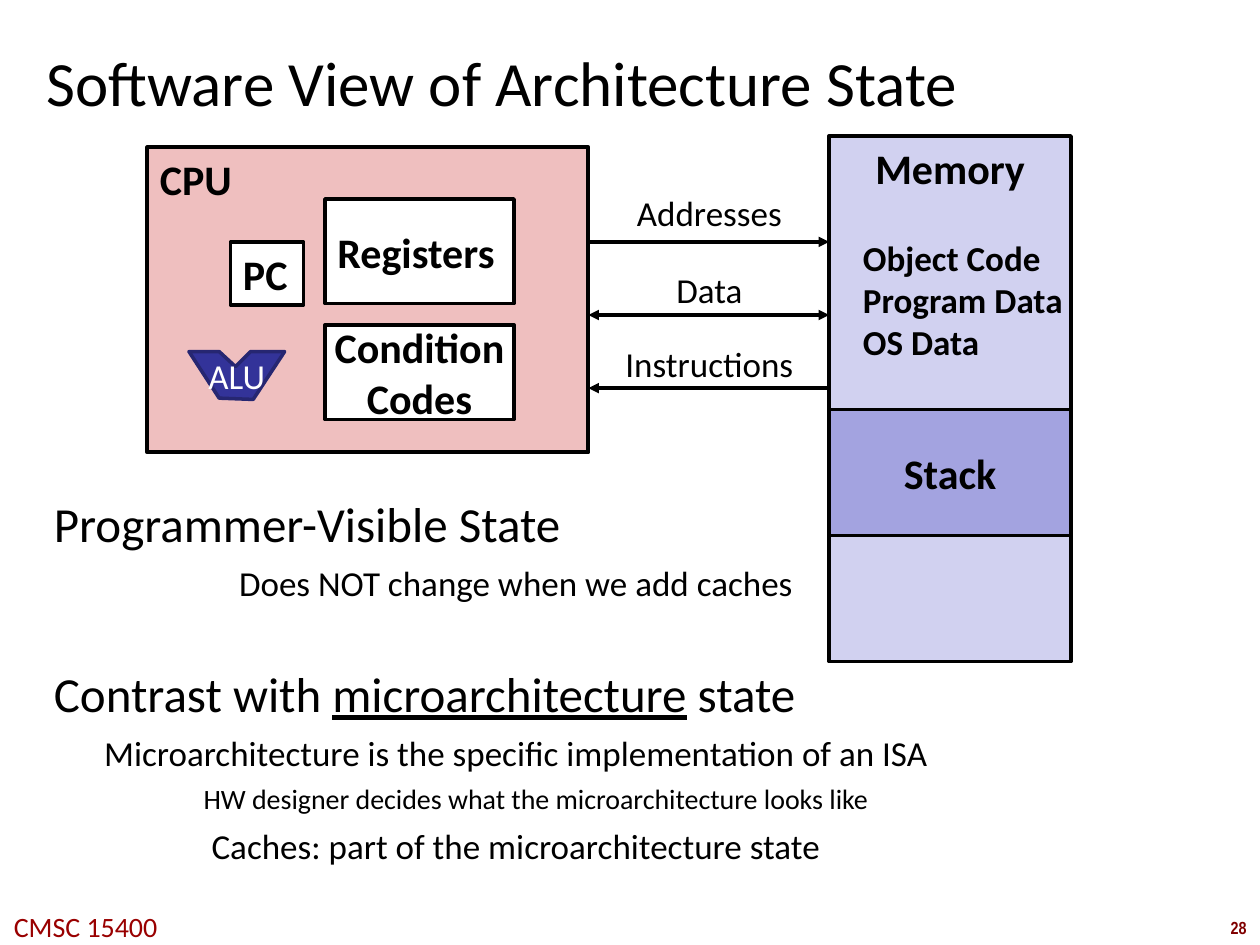
from dataclasses import dataclass
from typing import Optional

from lxml import etree
from pptx import Presentation
from pptx.dml.color import RGBColor
from pptx.enum import shapes, text
from pptx.oxml import ns
from pptx.util import Inches, Pt

BLACK = RGBColor(0x00, 0x00, 0x00)
WHITE = RGBColor(0xFF, 0xFF, 0xFF)
PINK = RGBColor(0xEF, 0xBF, 0xBF)
LAVENDER = RGBColor(0xD1, 0xD1, 0xF0)
VIOLET = RGBColor(0xA3, 0xA3, 0xE0)
INDIGO = RGBColor(0x33, 0x33, 0x99)
NAVY = RGBColor(0x26, 0x26, 0x71)
MAROON = RGBColor(0x80, 0x00, 0x00)
RED = RGBColor(0x99, 0x00, 0x00)

LEFT, CENTER = text.PP_ALIGN.LEFT, text.PP_ALIGN.CENTER
TOP, MIDDLE = text.MSO_ANCHOR.TOP, text.MSO_ANCHOR.MIDDLE

BUS_LEFT, BUS_RIGHT = 4.67, 6.58
BUS_TOP, BUS_STEP = 1.92, 0.58
MEMORY_WIDTH = 1.92


@dataclass(frozen=True)
class Block:
    label: str
    left: float
    top: float
    width: float
    height: float
    fill: RGBColor = WHITE
    align: text.PP_ALIGN = LEFT
    anchor: text.MSO_ANCHOR = MIDDLE
    line_width: float = 2
    wrap: bool = False


@dataclass(frozen=True)
class Bus:
    label: str
    label_top: float
    to_cpu: bool
    to_memory: bool


@dataclass(frozen=True)
class Point:
    content: str
    level: int = 1
    underlined: str = ""
    before: float = 5


BLOCKS = [
    Block("CPU", 1.17, 1.17, 3.5, 2.42, PINK, anchor=TOP, line_width=2.25, wrap=True),
    Block("PC", 1.83, 1.92, 0.58, 0.5),
    Block("Registers", 2.58, 1.58, 1.5, 0.83),
    Block("Condition\nCodes", 2.58, 2.58, 1.5, 0.75, align=CENTER),
    Block("Memory", BUS_RIGHT, 1.08, MEMORY_WIDTH, 4.17, LAVENDER, CENTER, TOP),
    Block("Stack", BUS_RIGHT, 3.25, MEMORY_WIDTH, 1, VIOLET, CENTER),
]
BUSES = [
    Bus("Addresses", 1.47, False, True),
    Bus("Data", 2.08, True, True),
    Bus("Instructions", 2.67, True, False),
]
POINTS = [
    Point("Programmer-Visible State", 0, before=0),
    Point("Does NOT change when we add caches"),
    Point("Contrast with microarchitecture state", 0, "microarchitecture", 34.4),
    Point("Microarchitecture is the specific implementation of an ISA"),
    Point("HW designer decides what the microarchitecture looks like", 2),
    Point("Caches: part of the microarchitecture state"),
]
LEVEL_SIZES = [28, 20, 16]
LEVEL_MARGINS = [0.25, 0.53, 0.85]
ALU_OUTLINE = [(1.5, 2.79), (1.74, 3.16), (2.01, 3.17), (2.26, 2.79),
               (1.99, 2.79), (1.87, 2.91), (1.74, 2.79)]


def write(para, content: str, *, size: float, color: RGBColor = BLACK,
          bold: bool = False, font: str = "Calibri",
          align: text.PP_ALIGN = LEFT, underlined: str = "") -> None:
    para.alignment = align
    parts = content.partition(underlined) if underlined else (content,)
    for part in parts:
        span = para.add_run()
        span.text = part
        span.font.name = font
        span.font.size = Pt(size)
        span.font.bold = bold
        span.font.color.rgb = color
        if part == underlined:
            span.font.underline = True


def fill_frame(frame, content: str, *, wrap: bool = True,
               anchor: text.MSO_ANCHOR = TOP, **style) -> None:
    frame.word_wrap = wrap
    frame.vertical_anchor = anchor
    for number, line in enumerate(content.split("\n")):
        para = frame.add_paragraph() if number else frame.paragraphs[0]
        write(para, line, **style)


def add_text(page, content: str, left: float, top: float, width: float,
             height: float, **style):
    box = page.shapes.add_textbox(
        Inches(left), Inches(top), Inches(width), Inches(height))
    fill_frame(box.text_frame, content, **style)
    return box


def paint(shape, fill: RGBColor, line: RGBColor, width: float) -> None:
    shape.shadow.inherit = False
    shape.fill.solid()
    shape.fill.fore_color.rgb = fill
    shape.line.color.rgb = line
    shape.line.width = Pt(width)


def draw_block(page, block: Block) -> None:
    shape = page.shapes.add_shape(
        shapes.MSO_SHAPE.RECTANGLE, Inches(block.left), Inches(block.top),
        Inches(block.width), Inches(block.height))
    paint(shape, block.fill, BLACK, block.line_width)
    fill_frame(shape.text_frame, block.label, wrap=block.wrap, anchor=block.anchor,
               size=24, bold=True, align=block.align)


def draw_bus(page, bus: Bus, y: float) -> None:
    line = page.shapes.add_connector(
        shapes.MSO_CONNECTOR.STRAIGHT,
        Inches(BUS_LEFT), Inches(y), Inches(BUS_RIGHT), Inches(y))
    line.line.color.rgb = BLACK
    line.line.width = Pt(2)
    outline = line.line._get_or_add_ln()
    for tag, shown in (("a:headEnd", bus.to_cpu), ("a:tailEnd", bus.to_memory)):
        if shown:
            etree.SubElement(outline, ns.qn(tag), type="triangle")
    etree.SubElement(line._element.spPr, ns.qn("a:effectLst"))
    add_text(page, bus.label, BUS_LEFT, bus.label_top, MEMORY_WIDTH, 0.43,
             size=20, align=CENTER)


def draw_alu(page) -> None:
    start, *rest = [(Inches(x), Inches(y)) for x, y in ALU_OUTLINE]
    builder = page.shapes.build_freeform(*start)
    builder.add_line_segments(rest, close=True)
    shape = builder.convert_to_shape()
    paint(shape, INDIGO, NAVY, 2)
    fill_frame(shape.text_frame, "ALU", anchor=MIDDLE, size=20, color=WHITE,
               align=CENTER)


def draw_points(page, points: list[Point]) -> None:
    box = page.shapes.add_textbox(
        Inches(0.33), Inches(3.87), Inches(7.25), Inches(3.38))
    frame = box.text_frame
    frame.word_wrap = True
    para: Optional[object] = None
    for point in points:
        para = frame.add_paragraph() if para else frame.paragraphs[0]
        para.level = point.level
        para.space_before = Pt(point.before)
        write(para, point.content, size=LEVEL_SIZES[point.level],
              align=CENTER if point.level else LEFT, underlined=point.underlined)
        properties = para._p.get_or_add_pPr()
        properties.set("marL", str(Inches(LEVEL_MARGINS[point.level])))
        properties.set("indent", str(Inches(-0.25)))


def main() -> None:
    deck = Presentation()
    deck.slide_width, deck.slide_height = Inches(10), Inches(7.5)
    page = deck.slides.add_slide(deck.slide_layouts[6])

    add_text(page, "28", 9.66, 7.23, 0.34, 0.27, wrap=False, size=10,
             font="Arial Narrow", color=MAROON, bold=True, align=CENTER)
    add_text(page, "CMSC 15400", -0.03, 7.17, 1.42, 0.37, wrap=False, size=16,
             color=RED, align=CENTER)
    title = add_text(page, "Software View of Architecture State",
                     0.33, 0.33, 7.9, 0.63, anchor=MIDDLE, size=36).text_frame
    title.margin_left = title.margin_right = Inches(0.04)
    title.margin_top = title.margin_bottom = Inches(0.04)

    draw_points(page, POINTS)
    for block in BLOCKS:
        draw_block(page, block)
    add_text(page, "Object Code\nProgram Data\nOS Data", 6.75, 1.83,
             MEMORY_WIDTH, 1.11, size=20, bold=True)
    for row, bus in enumerate(BUSES):
        draw_bus(page, bus, BUS_TOP + row * BUS_STEP)
    draw_alu(page)
    deck.save("out.pptx")


if __name__ == "__main__":
    main()
